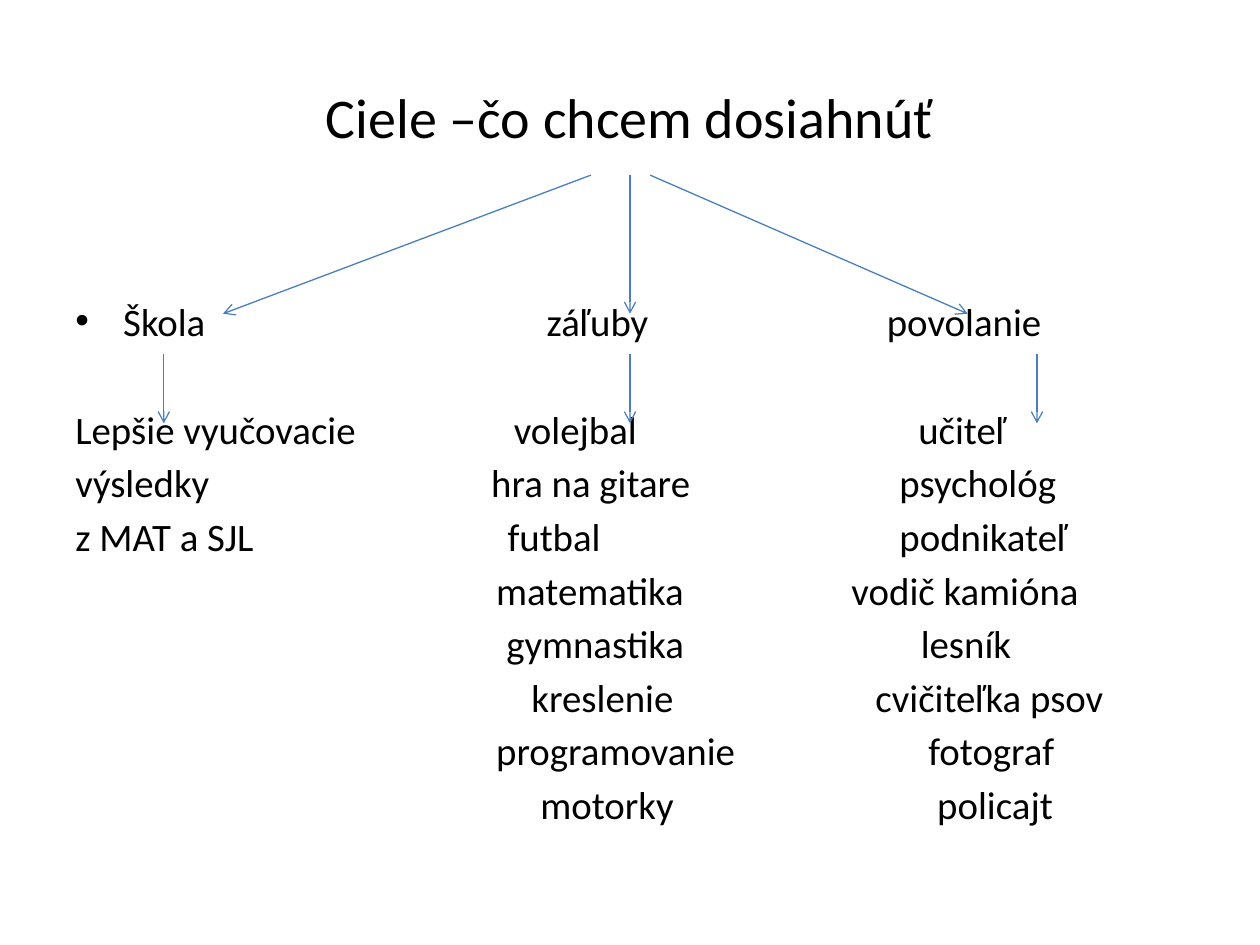
"""Build a slide of goals: a title with arrows to three columns of items."""
import dataclasses
import typing

import lxml.etree
import pptx
import pptx.dml.color
import pptx.enum.shapes
import pptx.enum.text
import pptx.oxml.ns
import pptx.util

Inches = pptx.util.Inches
Pt = pptx.util.Pt
qn = pptx.oxml.ns.qn
ALIGN = pptx.enum.text.PP_ALIGN
ANCHOR = pptx.enum.text.MSO_ANCHOR


@dataclasses.dataclass(frozen=True)
class Theme:
    font: str = "Calibri"
    text: str = "000000"
    arrow: str = "4B7EBC"
    title_size: float = 32
    body_size: float = 22.2
    arrow_width: float = 0.75
    row_gap: float = 4
    heading_gap: float = 35.1


class Entry(typing.NamedTuple):
    text: str
    indent: float = 0


class Column(typing.NamedTuple):
    left: float
    width: float
    heading: Entry
    items: list[Entry]
    bullet: bool = False


class Arrow(typing.NamedTuple):
    x1: float
    y1: float
    x2: float
    y2: float


THEME = Theme()
COLUMNS = [
    Column(0.5, 3.2, Entry("Škola", 0.38), [
        Entry("Lepšie vyučovacie"), Entry("výsledky"), Entry("z MAT a SJL"),
    ], bullet=True),
    Column(3.7, 2.9, Entry("záľuby", 0.54), [
        Entry("volejbal", 0.28), Entry("hra na gitare", 0.1),
        Entry("futbal", 0.23), Entry("matematika", 0.14),
        Entry("gymnastika", 0.22), Entry("kreslenie", 0.42),
        Entry("programovanie", 0.14), Entry("motorky", 0.49),
    ]),
    Column(6.6, 2.9, Entry("povolanie", 0.34), [
        Entry("učiteľ", 0.59), Entry("psychológ", 0.44),
        Entry("podnikateľ", 0.44), Entry("vodič kamióna", 0.06),
        Entry("lesník", 0.61), Entry("cvičiteľka psov", 0.25),
        Entry("fotograf", 0.67), Entry("policajt", 0.74),
    ]),
]
ARROWS = [Arrow(x1, 1.39, x2, 2.49) for x1, x2 in ((4.69, 1.77), (5, 5), (5.16, 7.68))]
ARROWS += [Arrow(x, 2.81, x, 3.36) for x in (1.3, 5, 8.23)]


def set_attrs(obj: typing.Any, values: dict[str, typing.Any]) -> None:
    for name, value in values.items():
        setattr(obj, name, value)


def add_box(slide, left: float, top: float, width: float, height: float, **frame):
    tb = slide.shapes.add_textbox(*map(Inches, (left, top, width, height)))
    tf = tb.text_frame
    set_attrs(tf, {"word_wrap": True, **frame})
    return tf


def write(p, text: str, size: float, **layout) -> None:
    set_attrs(p, layout)
    r = p.add_run()
    r.text = text
    set_attrs(r.font, {"name": THEME.font, "size": Pt(size)})
    r.font.color.rgb = pptx.dml.color.RGBColor.from_string(THEME.text)


def set_indent(p, indent: float, bullet: bool = False) -> None:
    pPr = p._p.get_or_add_pPr()
    pPr.set("marL", str(Inches(indent)))
    pPr.set("indent", str(-Inches(indent) if bullet else 0))
    if bullet:
        lxml.etree.SubElement(pPr, qn("a:buFont")).set("typeface", "Arial")
        lxml.etree.SubElement(pPr, qn("a:buChar")).set("char", "•")


def add_column(slide, column: Column) -> None:
    tf = add_box(slide, column.left, 1.75, column.width, 4.95, margin_top=Inches(0.61))
    for i, entry in enumerate([column.heading, *column.items]):
        p = tf.add_paragraph() if i else tf.paragraphs[0]
        gap = (0, THEME.heading_gap, THEME.row_gap)[min(i, 2)]
        write(p, entry.text, THEME.body_size, space_before=Pt(gap))
        set_indent(p, entry.indent, column.bullet and i == 0)


def add_arrow(slide, arrow: Arrow) -> None:
    sp = slide.shapes.add_connector(
        pptx.enum.shapes.MSO_CONNECTOR.STRAIGHT, *map(Inches, arrow))
    sp.line.width = Pt(THEME.arrow_width)
    sp.line.color.rgb = pptx.dml.color.RGBColor.from_string(THEME.arrow)
    lxml.etree.SubElement(sp.line._get_or_add_ln(), qn("a:tailEnd")).set("type", "arrow")
    lxml.etree.SubElement(sp._element.spPr, qn("a:effectLst"))


def main() -> None:
    prs = pptx.Presentation()
    set_attrs(prs, {"slide_width": Inches(10), "slide_height": Inches(7.5)})
    slide = prs.slides.add_slide(prs.slide_layouts[6])
    tf = add_box(slide, 0.5, 0.3, 9, 1.25, vertical_anchor=ANCHOR.MIDDLE)
    write(tf.paragraphs[0], "Ciele –čo chcem dosiahnúť", THEME.title_size,
          alignment=ALIGN.CENTER)
    for column in COLUMNS:
        add_column(slide, column)
    for arrow in ARROWS:
        add_arrow(slide, arrow)
    prs.save("out.pptx")


if __name__ == "__main__":
    main()
